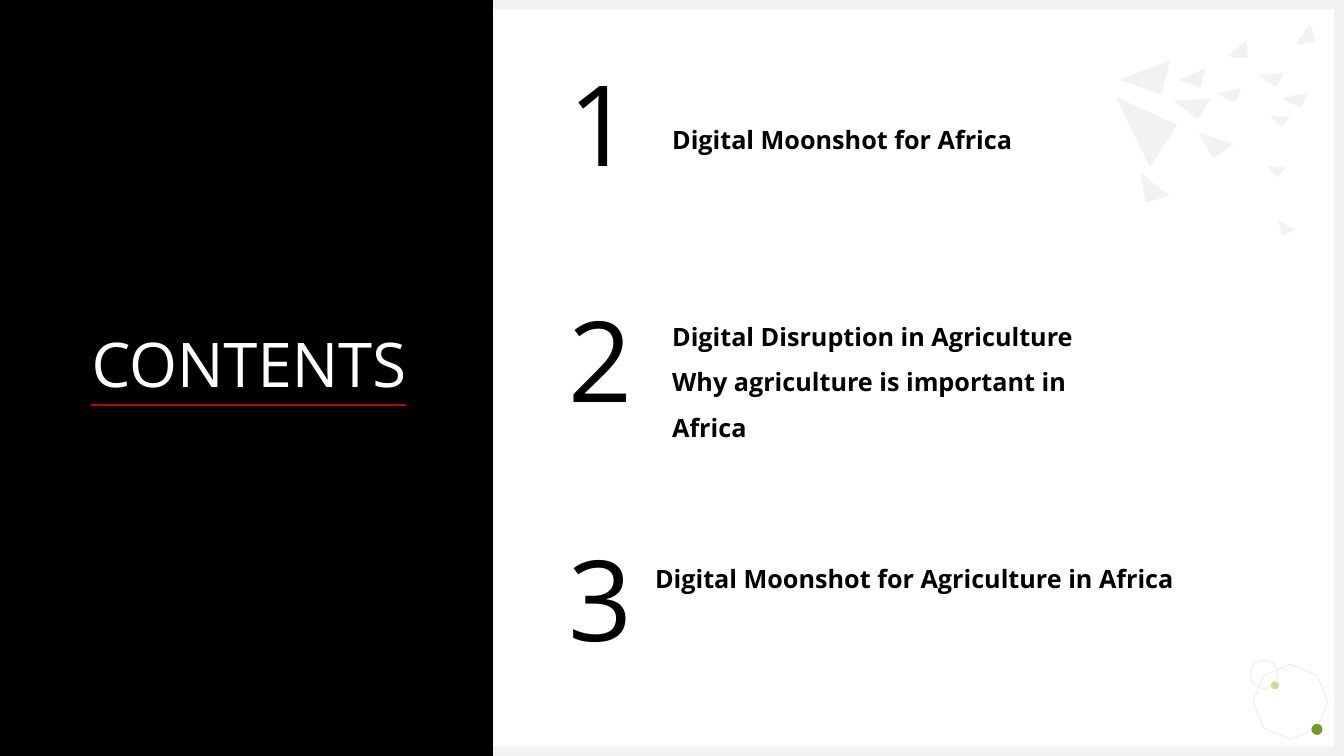
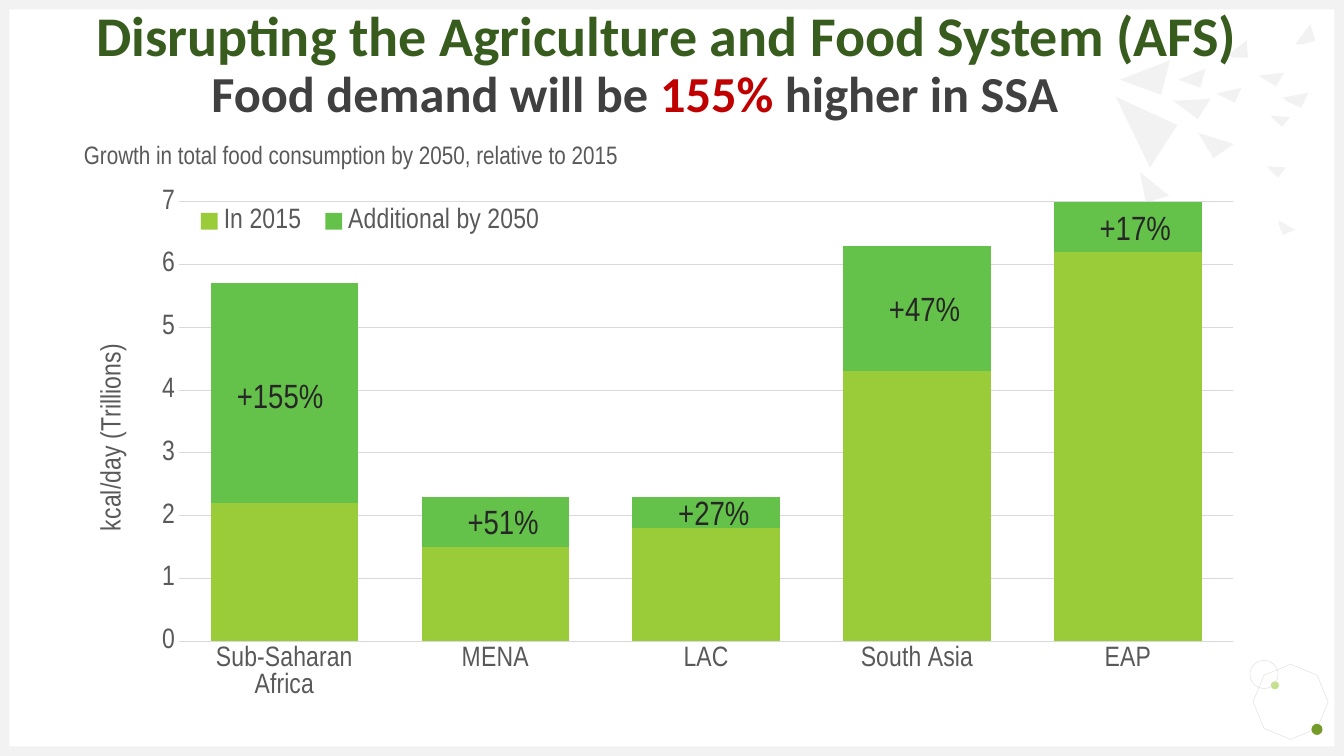
from lxml.etree import SubElement
from pptx import Presentation
from pptx.chart.data import CategoryChartData
from pptx.dml.color import RGBColor
from pptx.enum.chart import XL_CHART_TYPE, XL_LEGEND_POSITION, XL_TICK_MARK
from pptx.enum.shapes import MSO_CONNECTOR, MSO_SHAPE
from pptx.enum.text import MSO_ANCHOR, PP_ALIGN
from pptx.oxml import parse_xml
from pptx.oxml.ns import nsdecls, qn
from pptx.util import Cm, Pt

COLORS = {
    "black": "000000", "white": "FFFFFF", "red": "C00000", "dark": "404040",
    "label": "262626", "axis": "595959", "grid": "D9D9D9", "pale": "F2F2F2",
    "heading": "375C1E", "lime": "9ACB39", "green": "64C24A",
    "light_dot": "C2E088", "dark_dot": "749A29",
}
SLIDE_W, SLIDE_H, BORDER = 33.87, 19.05, 0.24
SANS, NARROW, HEAD = "Open Sans", "Arial Narrow", "Calibri"

SHARDS = [
    [(29.49, 1.52), (29.26, 2.39), (28.22, 2.01)],
    [(30.51, 2.49), (30.18, 3), (29.57, 2.54)],
    [(30.38, 1.73), (30.25, 2.21), (29.69, 2.01)],
    [(31.29, 2.21), (31.12, 2.59), (30.66, 2.36)],
    [(31.42, 1.02), (31.45, 1.45), (31.09, 1.45), (30.94, 1.4)],
    [(32.51, 2.95), (32.31, 3.2), (32.11, 3.02), (32.03, 2.92)],
    [(33.02, 0.61), (33.15, 1.02), (32.82, 1.12), (32.64, 1.12)],
    [(32.36, 1.83), (32.16, 2.18), (31.72, 1.91)],
    [(32.97, 2.34), (32.79, 2.72), (32.46, 2.57), (32.33, 2.46)],
    [(29.67, 3.15), (28.98, 4.22), (28.12, 2.44)],
    [(31.09, 3.63), (30.58, 3.99), (30.2, 3.35)],
    [(32.41, 4.22), (32.21, 4.47), (32, 4.29), (31.95, 4.19)],
    [(29.46, 4.93), (28.88, 5.11), (28.73, 4.34)],
    [(32.64, 5.79), (32.33, 5.92), (32.23, 5.66), (32.23, 5.56)],
]
ORNAMENTS = [
    (MSO_SHAPE.OCTAGON, 31.65, 16.81, 1.75, None, 22.7),
    (MSO_SHAPE.OVAL, 32.03, 17.17, 0.2, "light_dot", 0),
    (MSO_SHAPE.OVAL, 33.05, 18.24, 0.28, "dark_dot", 0),
    (MSO_SHAPE.OVAL, 31.5, 16.64, 0.71, None, 0),
]
FRAME = [
    (0, 0, SLIDE_W, BORDER), (0, SLIDE_H - BORDER, SLIDE_W, BORDER),
    (0, 0, BORDER, SLIDE_H), (SLIDE_W - BORDER, 0, BORDER, SLIDE_H),
]

CONTENTS = [
    ("1", 1.24, 16.69, 2.62, 16.81, ["Digital Moonshot for Africa"]),
    ("2", 7.19, 16.69, 7.59, 12.22,
     ["Digital Disruption in Agriculture", "Why agriculture is important in Africa"]),
    ("3", 13.23, 16.26, 13.69, 16.56, ["Digital Moonshot for Agriculture in Africa"]),
]

REGIONS = ["Sub-Saharan Africa", "MENA", "LAC", "South Asia", "EAP"]
SERIES = [
    ("In 2015", [2.2, 1.5, 1.8, 4.3, 6.2], "lime"),
    ("Additional by 2050", [3.5, 0.8, 0.5, 2, 1.1], "green"),
]
GROWTH = [("+155%", 9.32), ("+51%", 12.5), ("+27%", 12.27), ("+47%", 7.14), ("+17%", 5.08)]
GROWTH_LEFT, GROWTH_STEP = 5.72, 5.31


def rgb(name):
    return RGBColor.from_string(COLORS[name])


def set_font(font, name, size, color, bold=False):
    font.name, font.size, font.bold = name, Pt(size), bold
    font.color.rgb = rgb(color)


def paint(s, fill=None, line=None, width=0.25):
    s.shadow.inherit = False
    if fill:
        s.fill.solid()
        s.fill.fore_color.rgb = rgb(fill)
    else:
        s.fill.background()
    if line:
        s.line.color.rgb = rgb(line)
        s.line.width = Pt(width)
    else:
        s.line.fill.background()
    return s


def add_shape(slide, kind, x, y, w, h, **look):
    return paint(slide.shapes.add_shape(kind, Cm(x), Cm(y), Cm(w), Cm(h)), **look)


def add_text(slide, paragraphs, x, y, w, h, font=SANS, size=18, color="black",
             bold=False, align=PP_ALIGN.LEFT, spacing=None, wrap=True,
             anchor=MSO_ANCHOR.TOP, inset=None):
    tf = slide.shapes.add_textbox(Cm(x), Cm(y), Cm(w), Cm(h)).text_frame
    tf.word_wrap, tf.vertical_anchor = wrap, anchor
    if inset is not None:
        tf.margin_left = tf.margin_right = tf.margin_top = tf.margin_bottom = Cm(inset)
    for i, runs in enumerate(paragraphs):
        p = tf.add_paragraph() if i else tf.paragraphs[0]
        p.alignment = align
        if spacing:
            p.line_spacing = spacing
        for text, run_color in [(runs, color)] if isinstance(runs, str) else runs:
            r = p.add_run()
            r.text = text
            set_font(r.font, font, size, run_color, bold)


def add_background(slide, layout):
    parts = []
    for kind, x, y, side, fill, turn in ORNAMENTS:
        s = add_shape(slide, kind, x, y, side, side, fill=fill,
                      line=None if fill else "grid")
        s.rotation = turn
        parts.append(s)
    parts += [add_shape(slide, MSO_SHAPE.RECTANGLE, *bar, fill="pale") for bar in FRAME]
    for shard in SHARDS:
        points = [(Cm(x), Cm(y)) for x, y in shard]
        builder = slide.shapes.build_freeform(*points[0])
        builder.add_line_segments(points[1:], close=True)
        parts.append(paint(builder.convert_to_shape(), fill="pale"))
    for s in parts:
        layout.element.cSld.spTree.append(s.element)


def place(element, index, **values):
    for old in element.findall(qn("c:layout")):
        element.remove(old)
    layout = parse_xml(f"<c:layout {nsdecls('c')}><c:manualLayout/></c:layout>")
    for tag, value in values.items():
        SubElement(layout[0], qn(f"c:{tag}")).set("val", str(value))
    element.insert(index, layout)


def set_title(owner, text, size):
    tf = owner.text_frame
    tf.text = text
    set_font(tf.paragraphs[0].runs[0].font, NARROW, size, "axis")


def add_food_chart(slide):
    data = CategoryChartData(number_format="0.0")
    data.categories = REGIONS
    for name, values, _ in SERIES:
        data.add_series(name, values)
    chart = slide.shapes.add_chart(XL_CHART_TYPE.COLUMN_STACKED, Cm(1.7), Cm(3.2),
                                   Cm(29.92), Cm(14.83), data).chart
    set_font(chart.font, NARROW, 20, "axis")
    plot = chart.plots[0]
    plot.gap_width, plot.overlap, plot.vary_by_categories = 43, 100, False
    for series, (_, _, color) in zip(plot.series, SERIES):
        series.format.fill.solid()
        series.format.fill.fore_color.rgb = rgb(color)

    cat, val = chart.category_axis, chart.value_axis
    cat.major_tick_mark = val.major_tick_mark = XL_TICK_MARK.NONE
    val.minimum_scale, val.maximum_scale, val.major_unit = 0, 7, 1
    val.tick_labels.number_format = "#,##0"
    val.tick_labels.number_format_is_linked = False
    val.format.line.fill.background()
    val.has_major_gridlines = True
    for line in (cat.format.line, val.major_gridlines.format.line):
        line.color.rgb = rgb("grid")
        line.width = Pt(0.75)
    for axis in (cat, val):
        set_font(axis.tick_labels.font, NARROW, 20, "axis")

    set_title(chart.chart_title, "Growth in total food consumption by 2050, relative to 2015", 18)
    set_title(val.axis_title, "kcal/day (Trillions)", 20)
    chart.has_legend = True
    chart.legend.position = XL_LEGEND_POSITION.BOTTOM
    chart.legend.include_in_layout = False
    set_font(chart.legend.font, NARROW, 20, "axis")

    root = chart.element.find(qn("c:chart"))
    edge = {"xMode": "edge", "yMode": "edge"}
    place(root.find(qn("c:title")), 1, **edge, x=0.01, y=0.02)
    place(root.find(".//" + qn("c:valAx")).find(qn("c:title")), 1, **edge, x=0.02, y=0.36)
    place(root.find(qn("c:legend")), 1, **edge, x=0.1, y=0.12, w=0.31, h=0.08)
    place(root.find(qn("c:plotArea")), 0, layoutTarget="inner", **edge,
          x=0.094, y=0.127, w=0.888, h=0.747)


def add_contents_slide(slide):
    add_shape(slide, MSO_SHAPE.RECTANGLE, 0, 0, 12.42, SLIDE_H, fill="black")
    add_text(slide, ["CONTENTS"], 1.78, 8.08, 8.99, 2.13, size=44, color="white",
             align=PP_ALIGN.CENTER, wrap=False)
    rule = slide.shapes.add_connector(MSO_CONNECTOR.STRAIGHT, Cm(2.29), Cm(10.21),
                                      Cm(10.24), Cm(10.21))
    rule.line.color.rgb = rgb("red")
    rule.line.width = Pt(1.5)
    SubElement(rule.element.spPr, qn("a:effectLst"))
    for number, number_y, x, y, w, lines in CONTENTS:
        add_text(slide, [number], 14.07, number_y, 2.18, 3.68, size=80, wrap=False)
        add_text(slide, lines, x, y, w, 1.27 * len(lines), bold=True, spacing=1.5)


def add_demand_slide(slide):
    add_text(slide, [[("Food demand will be ", "dark"), ("155% ", "red"),
                      ("higher in SSA", "dark")]],
             0, 1.37, 32, 2.13, font=HEAD, size=36, bold=True, align=PP_ALIGN.CENTER,
             spacing=0.9, anchor=MSO_ANCHOR.MIDDLE, inset=0)
    add_food_chart(slide)
    for i, (label, y) in enumerate(GROWTH):
        add_text(slide, [label], GROWTH_LEFT + i * GROWTH_STEP, y, 3.3, 1.27, font=NARROW,
                 size=24, color="label", align=PP_ALIGN.CENTER if i else PP_ALIGN.LEFT)
    add_text(slide, ["Disrupting the Agriculture and Food System (AFS)"], 2, -0.1, 29.6, 1.96,
             font=HEAD, size=40, color="heading", bold=True, align=PP_ALIGN.CENTER, wrap=False)


def main():
    prs = Presentation()
    prs.slide_width, prs.slide_height = Cm(SLIDE_W), Cm(SLIDE_H)
    blank = prs.slide_layouts[6]
    contents, demand = [prs.slides.add_slide(blank) for _ in range(2)]
    add_background(contents, blank)
    add_contents_slide(contents)
    add_demand_slide(demand)
    prs.save("out.pptx")


if __name__ == "__main__":
    main()
